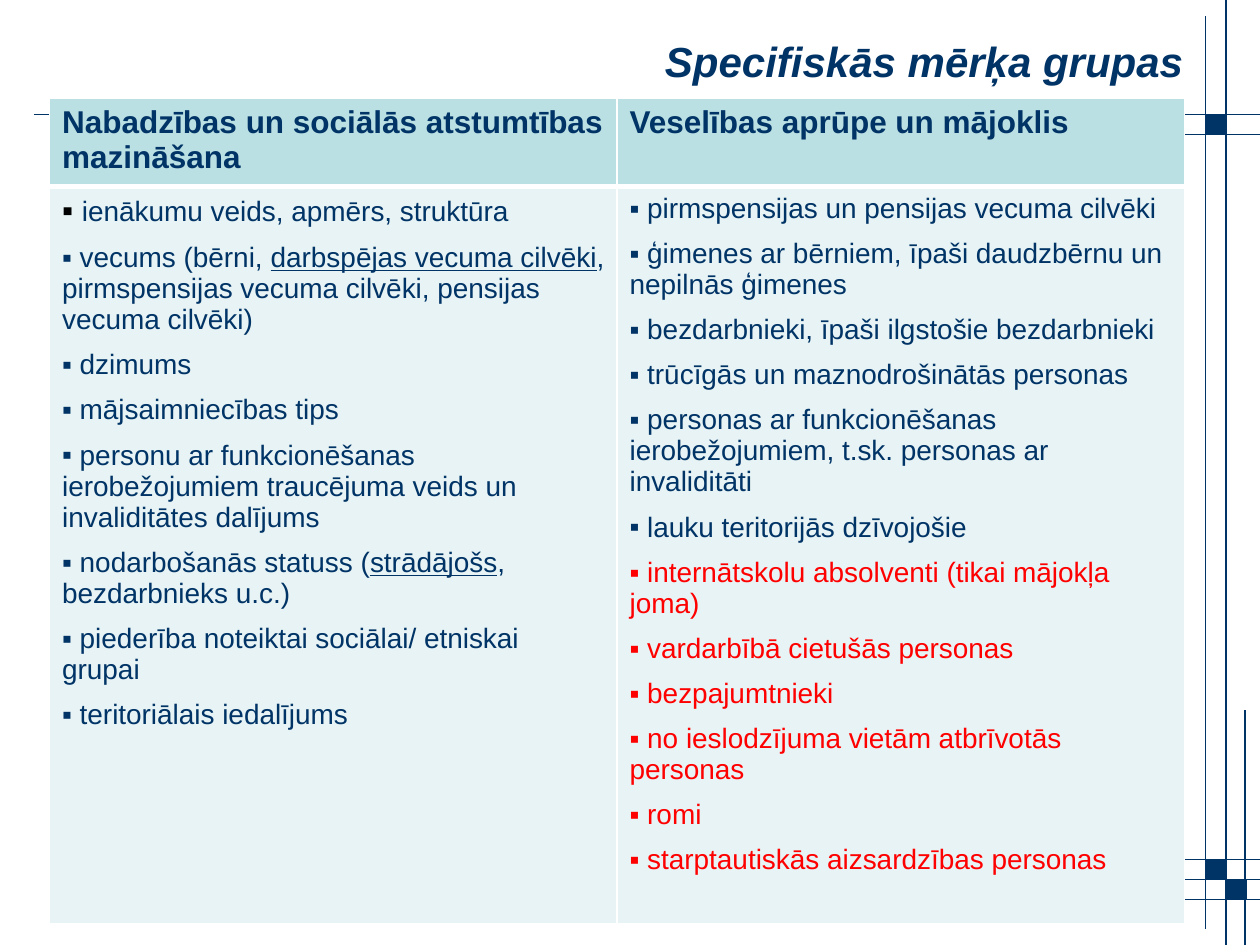
"""Build the slide on specific target groups as a two-column table."""
from dataclasses import dataclass

from lxml.etree import SubElement
from pptx import Presentation
from pptx.dml.color import RGBColor
from pptx.enum.shapes import MSO_CONNECTOR, MSO_SHAPE
from pptx.enum.text import MSO_ANCHOR, PP_ALIGN
from pptx.oxml.ns import qn
from pptx.util import Pt


@dataclass(frozen=True)
class Theme:
    font: str = "Arial"
    navy: str = "003366"
    red: str = "FF0000"
    black: str = "000000"
    white: str = "FFFFFF"
    header: str = "BBE0E3"
    body: str = "E7F3F4"
    title_size: int = 24
    header_size: int = 18
    body_size: int = 16


theme = Theme()


def style(font, size, color, bold=False):
    font.name, font.size, font.bold = theme.font, Pt(size), bold
    font.color.rgb = RGBColor.from_string(color)


def add_solid_fill(parent, color):
    SubElement(SubElement(parent, qn("a:solidFill")), qn("a:srgbClr"), val=color)


prs = Presentation()
prs.slide_width, prs.slide_height = Pt(720), Pt(540)
slide = prs.slides.add_slide(prs.slide_layouts[6])

grid_lines = [
    (19.5, 65.5, 720, 65.5),
    (42.5, 77, 720, 77),
    (700.5, 0, 700.5, 540),
    (689, 9.4, 689, 530.6),
    (586.8, 502.5, 720, 502.5),
    (620.6, 491, 720, 491),
    (473, 514, 720, 514),
    (711.5, 406, 711.5, 540),
]
for ends in grid_lines:
    line = slide.shapes.add_connector(MSO_CONNECTOR.STRAIGHT, *map(Pt, ends))
    line.line.color.rgb = RGBColor.from_string(theme.navy)
    line.line.width = Pt(0.75)
    SubElement(line._element.spPr, qn("a:effectLst"))

for left, top in [(689, 65.5), (689, 491), (700.5, 502.5)]:
    square = slide.shapes.add_shape(MSO_SHAPE.RECTANGLE, Pt(left), Pt(top), Pt(11.5), Pt(11.5))
    square.shadow.inherit = False
    square.fill.solid()
    square.fill.fore_color.rgb = RGBColor.from_string(theme.navy)
    square.line.color.rgb = RGBColor.from_string(theme.navy)
    square.line.width = Pt(0.75)

title = slide.shapes.add_textbox(Pt(36.7), Pt(9.4), Pt(646.5), Pt(51)).text_frame
title.word_wrap = True
title.vertical_anchor = MSO_ANCHOR.MIDDLE
heading = title.paragraphs[0]
heading.text = "Specifiskās mērķa grupas"
heading.alignment = PP_ALIGN.RIGHT
style(heading.font, theme.title_size, theme.navy, bold=True)
heading.font.italic = True

underline_mark = "_"
columns = [
    ("Nabadzības un sociālās atstumtības mazināšana", [
        ("ienākumu veids, apmērs, struktūra", theme.navy),
        ("vecums (bērni, _darbspējas vecuma cilvēki_, pirmspensijas vecuma cilvēki, "
         "pensijas vecuma cilvēki)", theme.navy),
        ("dzimums", theme.navy),
        ("mājsaimniecības tips", theme.navy),
        ("personu ar funkcionēšanas ierobežojumiem traucējuma veids un "
         "invaliditātes dalījums", theme.navy),
        ("nodarbošanās statuss (_strādājošs_, bezdarbnieks u.c.)", theme.navy),
        ("piederība noteiktai sociālai/ etniskai grupai", theme.navy),
        ("teritoriālais iedalījums", theme.navy),
    ]),
    ("Veselības aprūpe un mājoklis", [
        ("pirmspensijas un pensijas vecuma cilvēki", theme.navy),
        ("ģimenes ar bērniem, īpaši daudzbērnu un nepilnās ģimenes", theme.navy),
        ("bezdarbnieki, īpaši ilgstošie bezdarbnieki", theme.navy),
        ("trūcīgās un maznodrošinātās personas", theme.navy),
        ("personas ar funkcionēšanas ierobežojumiem, t.sk. personas ar invaliditāti", theme.navy),
        ("lauku teritorijās dzīvojošie", theme.navy),
        ("internātskolu absolventi (tikai mājokļa joma)", theme.red),
        ("vardarbībā cietušās personas", theme.red),
        ("bezpajumtnieki", theme.red),
        ("no ieslodzījuma vietām atbrīvotās personas", theme.red),
        ("romi", theme.red),
        ("starptautiskās aizsardzības personas", theme.red),
    ]),
]

table = slide.shapes.add_table(2, 2, Pt(28.3), Pt(56.3), Pt(648.6), Pt(417.6)).table
table.horz_banding = False
table.rows[0].height, table.rows[1].height = Pt(46.8), Pt(370.8)

for column, (group_name, items) in enumerate(columns):
    header_cell, body_cell = table.cell(0, column), table.cell(1, column)
    for cell, color, thick_edge in [(header_cell, theme.header, "lnB"), (body_cell, theme.body, "lnT")]:
        properties = cell._tc.get_or_add_tcPr()
        for edge in ("lnL", "lnR", "lnT", "lnB"):
            width = Pt(3 if edge == thick_edge else 1)
            add_solid_fill(SubElement(properties, qn(f"a:{edge}"), w=str(width)), theme.white)
        cell.fill.solid()
        cell.fill.fore_color.rgb = RGBColor.from_string(color)

    header_cell.text = group_name
    style(header_cell.text_frame.paragraphs[0].font, theme.header_size, theme.navy, bold=True)

    body = body_cell.text_frame
    for index, (item, color) in enumerate(items):
        paragraph = body.paragraphs[0] if index == 0 else body.add_paragraph()
        paragraph.space_before = Pt(4 if index else 0)
        paragraph.space_after = Pt(4)
        black_lead = index == 0 and column == 0
        bullet_color = theme.black if black_lead else color
        bullet = paragraph._p.get_or_add_pPr()
        bullet.set("marL", "0")
        bullet.set("indent", "0")
        SubElement(SubElement(bullet, qn("a:buClr")), qn("a:srgbClr"), val=bullet_color)
        SubElement(bullet, qn("a:buFont"), typeface=theme.font)
        SubElement(bullet, qn("a:buChar"), char="▪")
        style(paragraph.font, theme.body_size, color)
        lead = paragraph.add_run()
        lead.text = " "
        if black_lead:
            style(lead.font, theme.header_size, theme.black)
        for part, words in enumerate(item.split(underline_mark)):
            run = paragraph.add_run()
            run.text = words
            if part % 2:
                run.font.underline = True

prs.save("out.pptx")
